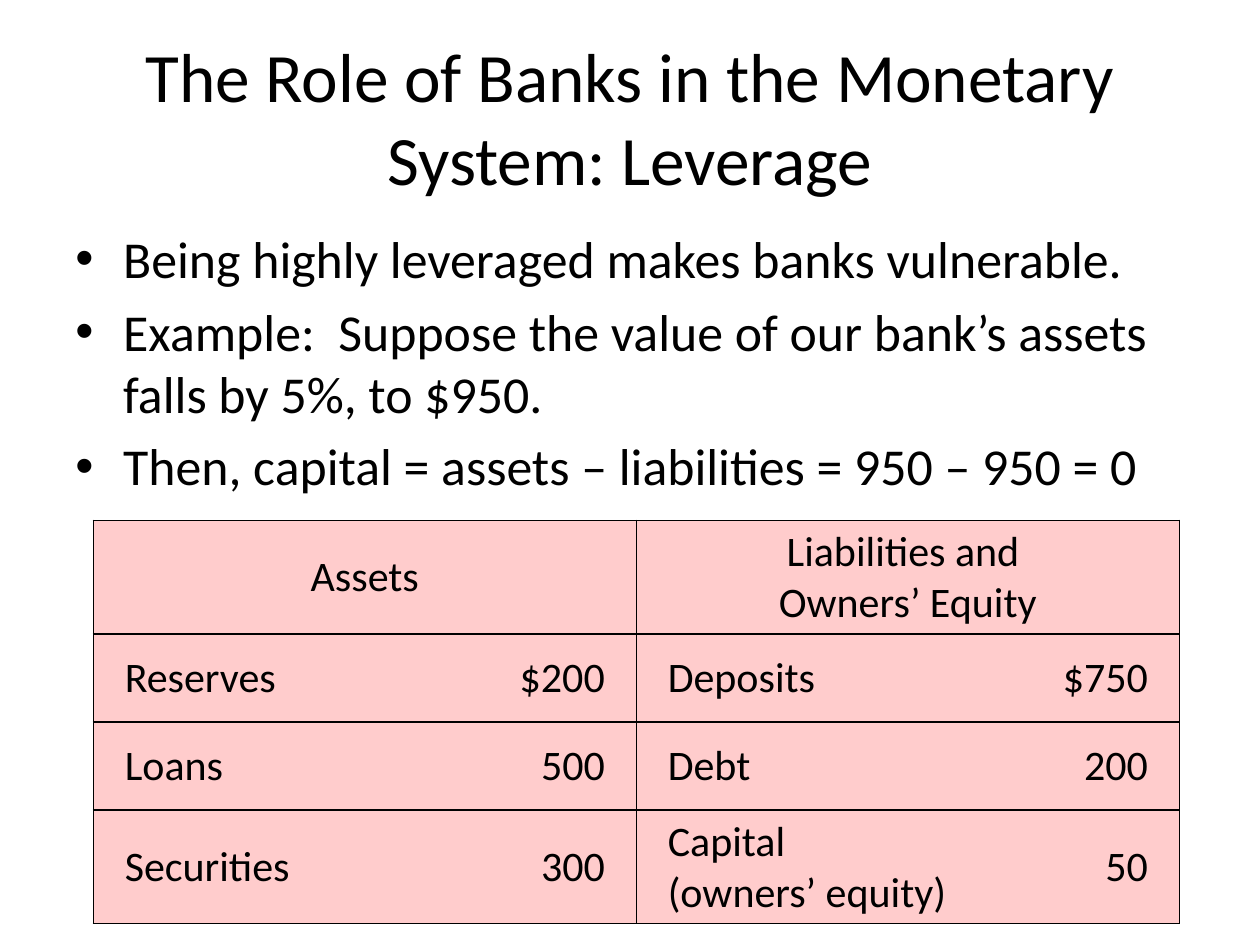
from typing import NamedTuple

from lxml import etree
from pptx import Presentation
from pptx.dml.color import RGBColor
from pptx.enum.text import MSO_ANCHOR, PP_ALIGN
from pptx.oxml.ns import qn
from pptx.util import Inches, Pt

LEFT, CENTER, RIGHT = PP_ALIGN.LEFT, PP_ALIGN.CENTER, PP_ALIGN.RIGHT
TOP, MIDDLE = MSO_ANCHOR.TOP, MSO_ANCHOR.MIDDLE
FONT = "Calibri"
COLORS = {"text": "000000", "border": "000000", "cell": "FFCCCC"}
BLANK_LAYOUT = 6

TITLE = "The Role of Banks in the Monetary System: Leverage"
POINTS = [
    "Being highly leveraged makes banks vulnerable.",
    "Example:  Suppose the value of our bank’s assets falls by 5%, to $950.",
    "Then, capital = assets – liabilities = 950 – 950 = 0",
]


class Entry(NamedTuple):
    label: str
    amount: str


class AccountSide(NamedTuple):
    heading: str
    entries: list[Entry]


BALANCE_SHEET = [
    AccountSide("Assets", [
        Entry("Reserves", "$200"),
        Entry("Loans", "500"),
        Entry("Securities", "300"),
    ]),
    AccountSide("Liabilities and \nOwners’ Equity", [
        Entry("Deposits", "$750"),
        Entry("Debt", "200"),
        Entry("Capital \n(owners’ equity)", "50"),
    ]),
]
COLUMN_WIDTHS = [2.81, 1.5, 2.88, 1.43]
ROW_HEIGHTS = [0.9, 0.7, 0.7, 0.9]


def style_paragraph(paragraph, size: float, alignment) -> None:
    paragraph.alignment = alignment
    paragraph.font.name = FONT
    paragraph.font.size = Pt(size)
    paragraph.font.color.rgb = RGBColor.from_string(COLORS["text"])


def add_text_frame(slide, left: float, top: float, width: float, height: float, anchor):
    box = slide.shapes.add_textbox(Inches(left), Inches(top), Inches(width), Inches(height))
    frame = box.text_frame
    frame.word_wrap = True
    frame.vertical_anchor = anchor
    return frame


def add_bullet(paragraph) -> None:
    properties = paragraph._p.get_or_add_pPr()
    properties.set("marL", str(Inches(0.38)))
    properties.set("indent", str(Inches(-0.38)))
    etree.SubElement(properties, qn("a:buFont"), typeface="Arial")
    etree.SubElement(properties, qn("a:buChar"), char="•")


def set_borders(cell, visible_sides: str) -> None:
    """Draw the sides named by the letters L, R, T and B, and clear the others."""
    properties = cell._tc.get_or_add_tcPr()
    for position, side in enumerate("LRTB"):
        line = etree.Element(qn(f"a:ln{side}"), w=str(Pt(1)))
        if side in visible_sides:
            fill = etree.SubElement(line, qn("a:solidFill"))
            etree.SubElement(fill, qn("a:srgbClr"), val=COLORS["border"])
        else:
            etree.SubElement(line, qn("a:noFill"))
        properties.insert(position, line)


def fill_cell(cell, text: str, alignment, side_margin: float, borders: str) -> None:
    cell.fill.solid()
    cell.fill.fore_color.rgb = RGBColor.from_string(COLORS["cell"])
    cell.vertical_anchor = MIDDLE
    cell.margin_left = cell.margin_right = Inches(side_margin)
    cell.margin_top = cell.margin_bottom = Inches(0.05)
    paragraph = cell.text_frame.paragraphs[0]
    paragraph.text = text
    style_paragraph(paragraph, 24, alignment)
    set_borders(cell, borders)


def add_balance_sheet(slide) -> None:
    table = slide.shapes.add_table(
        len(ROW_HEIGHTS), len(COLUMN_WIDTHS), Inches(0.74), Inches(4.13),
        Inches(sum(COLUMN_WIDTHS)), Inches(sum(ROW_HEIGHTS)),
    ).table
    table.first_row = table.horz_banding = False
    for column, width in zip(table.columns, COLUMN_WIDTHS):
        column.width = Inches(width)
    for row, height in zip(table.rows, ROW_HEIGHTS):
        row.height = Inches(height)

    for side_index, side in enumerate(BALANCE_SHEET):
        label_column = 2 * side_index
        amount_column = label_column + 1
        heading = table.cell(0, label_column)
        heading.merge(table.cell(0, amount_column))
        fill_cell(heading, side.heading, CENTER, 0.1, "LRTB")
        set_borders(table.cell(0, amount_column), "RTB")
        for row_index, entry in enumerate(side.entries, start=1):
            fill_cell(table.cell(row_index, label_column), entry.label, LEFT, 0.25, "LTB")
            fill_cell(table.cell(row_index, amount_column), entry.amount, RIGHT, 0.25, "RTB")


def main() -> None:
    presentation = Presentation()
    presentation.slide_width, presentation.slide_height = Inches(10), Inches(7.5)
    slide = presentation.slides.add_slide(presentation.slide_layouts[BLANK_LAYOUT])

    title = add_text_frame(slide, 0.5, 0.3, 9, 1.25, MIDDLE).paragraphs[0]
    title.text = TITLE
    style_paragraph(title, 39.6, CENTER)

    body = add_text_frame(slide, 0.5, 1.75, 9, 2.42, TOP)
    body.text = "\n".join(POINTS)
    for point in body.paragraphs:
        style_paragraph(point, 29.6, LEFT)
        point.space_before = Pt(6)
        add_bullet(point)

    add_balance_sheet(slide)
    presentation.save("out.pptx")


if __name__ == "__main__":
    main()
